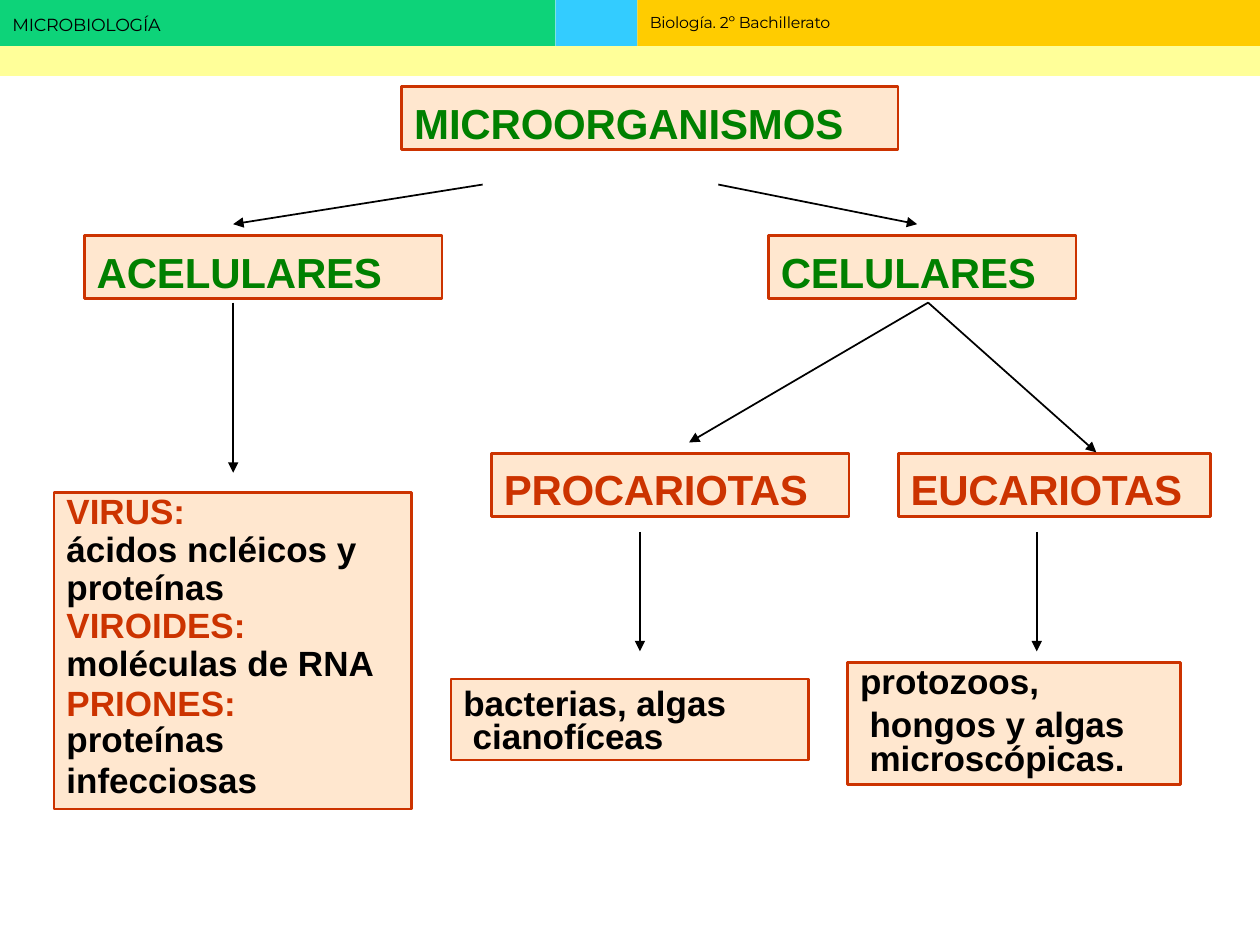
from lxml.etree import SubElement
from pptx import Presentation
from pptx.dml.color import RGBColor
from pptx.enum.shapes import MSO_CONNECTOR, MSO_SHAPE
from pptx.enum.text import MSO_ANCHOR, MSO_AUTO_SIZE, PP_ALIGN
from pptx.oxml.ns import qn
from pptx.util import Cm, Pt

THEME = {
    "green": "008000", "red": "CC3300", "black": "000000", "box": "FFE7CF",
    "font": "Arial", "bar_font": "Montserrat",
    "heading": 24, "body": 20, "bar_left": 10, "bar_right": 9,
    "outline": 1.5, "arrow": 1,
}
INSET = 0.25
HEAD_TOP = 0.21
HEAD_H = 1.27

BARS = [
    (0, 0, 11.2, 0.93, "0DD379", "MICROBIOLOGÍA", "bar_left", 0.28),
    (11.2, 0, 1.65, 0.93, "33CCFF", "", None, 0),
    (12.85, 0, 12.55, 0.93, "FFCC00", "Biología. 2º Bachillerato", "bar_right", 0.25),
    (0, 0.93, 25.4, 0.6, "FFFF99", "", None, 0),
]

TITLE = ("MICROORGANISMOS", "green", 8.1, 1.75, 10)
HEADINGS = [
    ("ACELULARES", "green", 1.7, 4.75, 7.21),
    ("CELULARES", "green", 15.49, 4.75, 6.2),
    ("PROCARIOTAS", "red", 9.91, 9.14, 7.21),
    ("EUCARIOTAS", "red", 18.11, 9.14, 6.3),
]

# text, colour, line spacing, space before, left indent, first-line indent
DETAILS = [
    (1.09, 9.93, 7.21, 6.38, 0, [
        ("VIRUS:", "red", Pt(22.4), 0, 0, 0),
        ("ácidos ncléicos y", "black", Pt(21.6), 0.2, 0, 0),
        ("proteínas", "black", Pt(21.6), 0, 0, 0),
        ("VIROIDES:", "red", Pt(21.6), 0.1, 0, 0),
        ("moléculas de RNA", "black", Pt(21.6), 0, 0, 0),
        ("PRIONES:", "red", Pt(21.6), 1.2, 0, 0),
        ("proteínas", "black", Pt(20.7), 0, 0, 0),
        ("infecciosas", "black", Pt(23.1), 0, 0, 0),
    ]),
    (9.09, 13.69, 7.21, 1.63, HEAD_TOP, [
        ("bacterias, algas cianofíceas", "black", Pt(19.2), 0, 0.19, -0.19),
    ]),
    (17.09, 13.36, 6.71, 2.46, 0, [
        ("protozoos,", "black", Pt(22.4), 0, 0, 0),
        ("hongos y algas microscópicas.", "black", 0.8, 5, 0.19, 0),
    ]),
]

ARROWS = [
    (9.73, 3.72, 4.7, 4.52),
    (14.48, 3.72, 18.49, 4.52),
    (4.7, 6.1, 4.7, 9.53),
    (18.71, 6.1, 13.89, 8.92),
    (18.71, 6.1, 22.1, 9.12),
    (12.9, 10.72, 12.9, 13.13),
    (20.9, 10.72, 20.9, 13.13),
]


def color(name):
    return RGBColor.from_string(THEME.get(name, name))


def add_rect(s, x, y, w, h):
    sp = s.shapes.add_shape(MSO_SHAPE.RECTANGLE, Cm(x), Cm(y), Cm(w), Cm(h))
    sp.shadow.inherit = False
    return sp


def paint_box(sp):
    sp.fill.solid()
    sp.fill.fore_color.rgb = color("box")
    sp.line.color.rgb = color("red")
    sp.line.width = Pt(THEME["outline"])


def set_frame(sp, top):
    tf = sp.text_frame
    tf.word_wrap = True
    tf.auto_size = MSO_AUTO_SIZE.NONE
    tf.vertical_anchor = MSO_ANCHOR.TOP
    tf.margin_left, tf.margin_top = Cm(INSET), Cm(top)
    tf.margin_right = tf.margin_bottom = 0
    return tf


def write(p, text, size, ink, font="font", bold=True, tracking=0):
    p.text = text
    p.alignment = PP_ALIGN.LEFT
    for r in p.runs:
        r.font.name = THEME[font]
        r.font.size = Pt(THEME[size])
        r.font.bold = bold
        r.font.color.rgb = color(ink)
        if tracking:
            r.font._element.set("spc", str(tracking))


def fill_heading(sp, text, ink):
    paint_box(sp)
    p = set_frame(sp, HEAD_TOP).paragraphs[0]
    write(p, text, "heading", ink, tracking=-10 if ink == "green" else -20)
    p.line_spacing = 1.0
    p.space_before = Pt(0)


def add_bar(s, x, y, w, h, fill, text, size, top):
    sp = add_rect(s, x, y, w, h)
    sp.fill.solid()
    sp.fill.fore_color.rgb = color(fill)
    sp.line.fill.background()
    if text:
        p = set_frame(sp, top).paragraphs[0]
        write(p, text, size, "black", "bar_font", False, -10)


def add_detail(s, x, y, w, h, top, lines):
    sp = add_rect(s, x, y, w, h)
    paint_box(sp)
    tf = set_frame(sp, top)
    for i, (text, ink, spacing, before, left, first) in enumerate(lines):
        p = tf.add_paragraph() if i else tf.paragraphs[0]
        write(p, text, "body", ink)
        p.line_spacing = spacing
        p.space_before = Pt(before)
        pPr = p._p.get_or_add_pPr()
        pPr.set("marL", str(Cm(left)))
        pPr.set("indent", str(Cm(first)))


def add_arrow(s, x1, y1, x2, y2):
    cn = s.shapes.add_connector(MSO_CONNECTOR.STRAIGHT, Cm(x1), Cm(y1), Cm(x2), Cm(y2))
    cn.line.color.rgb = color("black")
    cn.line.width = Pt(THEME["arrow"])
    SubElement(cn.line._get_or_add_ln(), qn("a:tailEnd"), type="triangle")
    SubElement(cn._element.spPr, qn("a:effectLst"))


def main():
    prs = Presentation()
    prs.slide_width, prs.slide_height = Cm(25.4), Cm(19.05)
    s = prs.slides.add_slide(prs.slide_layouts[5])

    for bar in BARS:
        add_bar(s, *bar)

    text, ink, x, y, w = TITLE
    title = s.shapes.title
    title.left, title.top, title.width, title.height = Cm(x), Cm(y), Cm(w), Cm(HEAD_H)
    fill_heading(title, text, ink)

    for text, ink, x, y, w in HEADINGS:
        fill_heading(add_rect(s, x, y, w, HEAD_H), text, ink)
    for detail in DETAILS:
        add_detail(s, *detail)
    for arrow in ARROWS:
        add_arrow(s, *arrow)

    prs.save("out.pptx")


if __name__ == "__main__":
    main()
